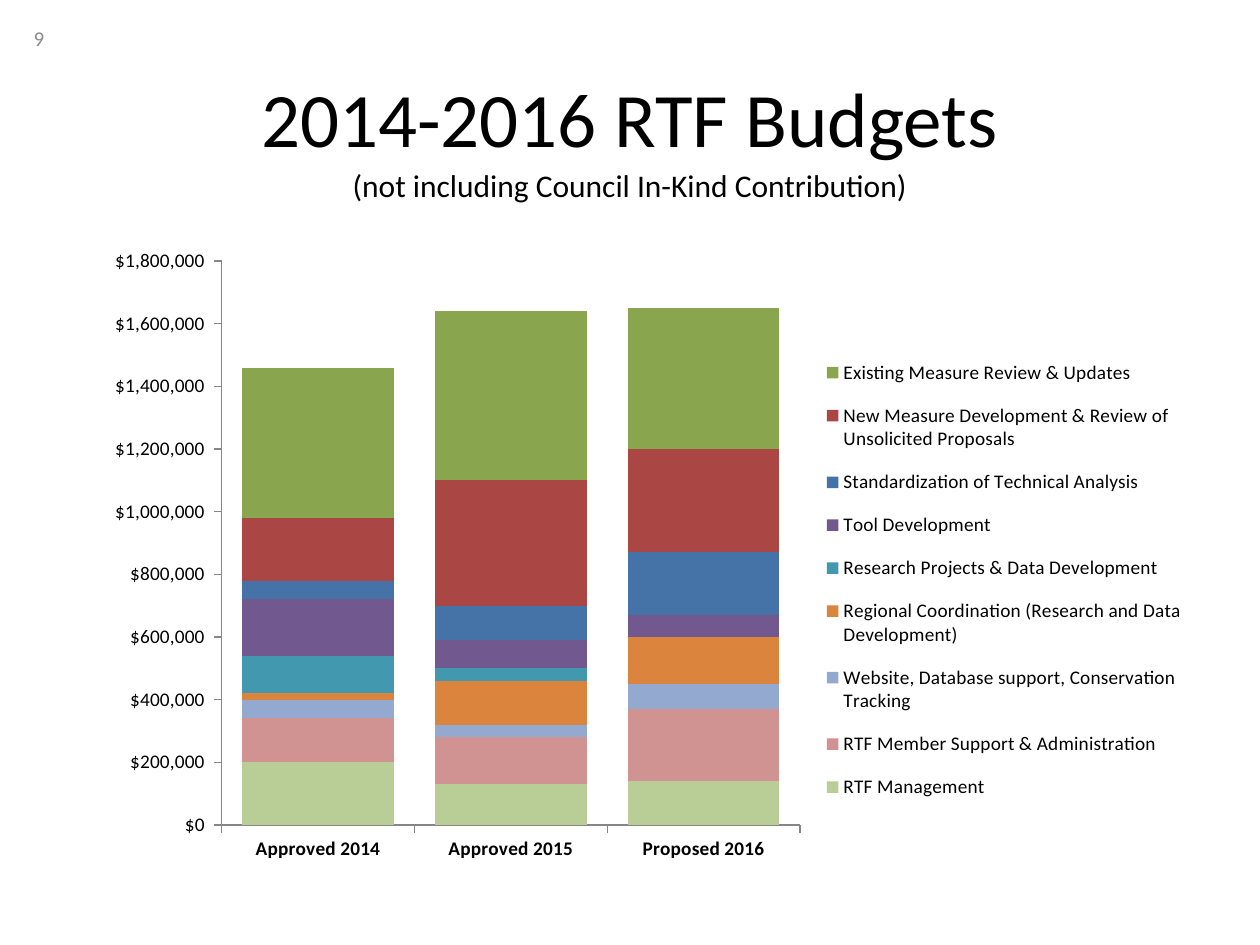
from dataclasses import dataclass

from lxml import etree
from pptx import Presentation
from pptx.chart.data import CategoryChartData
from pptx.dml.color import RGBColor
from pptx.enum import chart as ch, text
from pptx.oxml.ns import qn
from pptx.util import Cm, Pt


@dataclass(frozen=True)
class Theme:
    font: str = "Calibri"
    ink: str = "000000"
    muted: str = "8C8C8C"
    axis: str = "868686"
    title_size: int = 44
    subtitle_size: int = 18
    number_size: int = 12
    chart_size: int = 11


THEME = Theme()
YEARS = ("Approved 2014", "Approved 2015", "Proposed 2016")
DOLLARS = '"$"#,##0_);\\("$"#,##0\\)'
BUDGETS = (
    ("RTF Management", (200000, 130000, 140000), "B9CD96"),
    ("RTF Member Support & Administration", (140000, 150000, 230000), "D19392"),
    ("Website, Database support, Conservation Tracking", (60000, 40000, 80000), "93A9CF"),
    ("Regional Coordination (Research and Data Development)", (20000, 140000, 150000), "DB843D"),
    ("Research Projects & Data Development", (120000, 40000, 0), "4198AF"),
    ("Tool Development", (180000, 90000, 70000), "71588F"),
    ("Standardization of Technical Analysis", (60000, 110000, 200000), "4572A7"),
    ("New Measure Development & Review of Unsolicited Proposals", (200000, 400000, 330000), "AA4643"),
    ("Existing Measure Review & Updates", (480000, 540000, 450000), "89A54E"),
)


def style_font(font, size, color=THEME.ink, bold=False):
    font.name = THEME.font
    font.size = Pt(size)
    font.bold = bold
    font.color.rgb = RGBColor.from_string(color)


def add_line_of_text(slide, wording, place, size, color=THEME.ink, align=text.PP_ALIGN.CENTER):
    frame = slide.shapes.add_textbox(*map(Cm, place)).text_frame
    frame.word_wrap = True
    frame.vertical_anchor = text.MSO_ANCHOR.MIDDLE
    paragraph = frame.paragraphs[0]
    paragraph.alignment = align
    run = paragraph.add_run()
    run.text = wording
    style_font(run.font, size, color)


def place_by_fraction(parent, index, fractions, inner=False):
    for old in parent.findall(qn("c:layout")):
        parent.remove(old)
    layout = etree.Element(qn("c:layout"))
    manual = etree.SubElement(layout, qn("c:manualLayout"))
    settings = [("layoutTarget", "inner")] if inner else []
    settings += [("xMode", "edge"), ("yMode", "edge"), *zip("xywh", fractions)]
    for tag, value in settings:
        etree.SubElement(manual, qn(f"c:{tag}")).set("val", str(value))
    parent.insert(index, layout)


def style_axis(axis, bold=False):
    axis.has_major_gridlines = False
    axis.major_tick_mark = ch.XL_TICK_MARK.OUTSIDE
    axis.minor_tick_mark = ch.XL_TICK_MARK.NONE
    axis.format.line.color.rgb = RGBColor.from_string(THEME.axis)
    style_font(axis.tick_labels.font, THEME.chart_size, bold=bold)


def add_budget_chart(slide, place):
    budget_data = CategoryChartData(number_format=DOLLARS)
    budget_data.categories = YEARS
    for activity, amounts, _ in BUDGETS:
        budget_data.add_series(activity, amounts)
    chart = slide.shapes.add_chart(
        ch.XL_CHART_TYPE.COLUMN_STACKED, *map(Cm, place), budget_data
    ).chart
    chart.has_title = False
    style_font(chart.font, THEME.chart_size)

    columns = chart.plots[0]
    columns.gap_width = 27
    columns.overlap = 100
    columns.vary_by_categories = False
    for series, (_, _, color) in zip(columns.series, BUDGETS):
        series.format.fill.solid()
        series.format.fill.fore_color.rgb = RGBColor.from_string(color)

    style_axis(chart.category_axis, bold=True)
    style_axis(chart.value_axis)
    chart.value_axis.minimum_scale = 0
    chart.value_axis.maximum_scale = 1800000
    chart.value_axis.major_unit = 200000
    chart.value_axis.tick_labels.number_format = DOLLARS
    chart.value_axis.tick_labels.number_format_is_linked = False

    chart.has_legend = True
    chart.legend.position = ch.XL_LEGEND_POSITION.RIGHT
    chart.legend.include_in_layout = False
    style_font(chart.legend.font, THEME.chart_size)
    plot_area = chart.element.find(f".//{qn('c:plotArea')}")
    legend = chart.element.find(f".//{qn('c:legend')}")
    place_by_fraction(plot_area, 0, (0.14, 0.06, 0.51, 0.84), inner=True)
    place_by_fraction(legend, 1, (0.67, 0.18, 0.32, 0.71))


def main():
    deck = Presentation()
    deck.slide_width, deck.slide_height = Cm(25.4), Cm(19.05)
    slide = deck.slides.add_slide(deck.slide_layouts[6])
    add_line_of_text(slide, "2014-2016 RTF Budgets", (1.27, 0.76, 22.86, 3.18), THEME.title_size)
    add_line_of_text(slide, "9", (0.43, 0.25, 5.92, 1.02), THEME.number_size,
                     THEME.muted, text.PP_ALIGN.LEFT)
    add_budget_chart(slide, (1.27, 4.45, 22.86, 13.54))
    add_line_of_text(slide, "(not including Council In-Kind Contribution)",
                     (1.27, 3.25, 22.86, 0.97), THEME.subtitle_size)
    deck.save("out.pptx")


if __name__ == "__main__":
    main()
